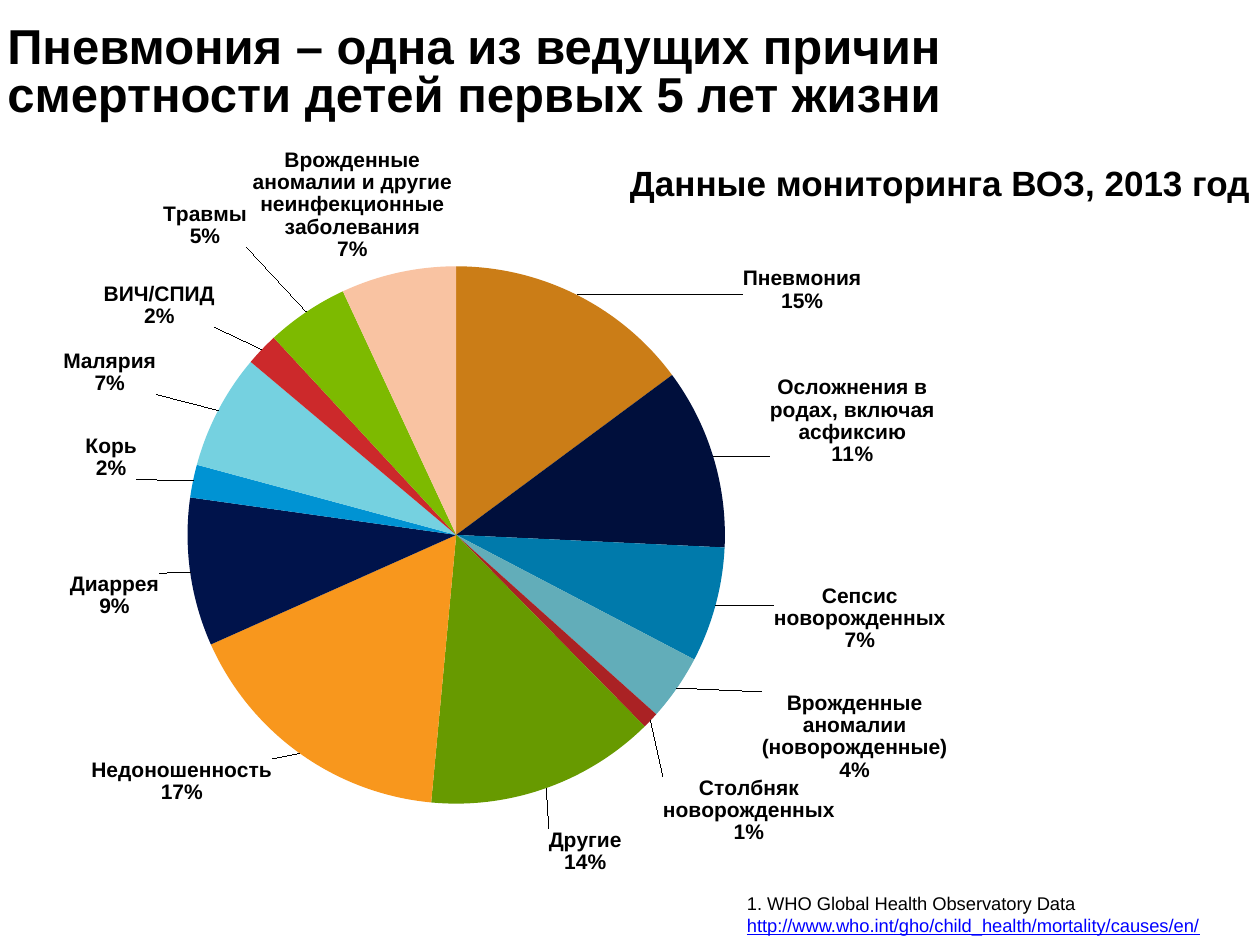
from dataclasses import dataclass
from math import cos, pi, sin

from pptx import Presentation
from pptx.chart.data import CategoryChartData
from pptx.dml.color import RGBColor
from pptx.enum.chart import XL_CHART_TYPE, XL_LABEL_POSITION
from pptx.enum.text import MSO_ANCHOR, PP_ALIGN
from pptx.oxml import parse_xml
from pptx.oxml.ns import nsdecls
from pptx.util import Pt

PIE = XL_CHART_TYPE.PIE
OUTSIDE_END = XL_LABEL_POSITION.OUTSIDE_END
TOP, MIDDLE = MSO_ANCHOR.TOP, MSO_ANCHOR.MIDDLE
LEFT, RIGHT = PP_ALIGN.LEFT, PP_ALIGN.RIGHT

FONT = "Arial"
BLACK = "000000"
LINK = "0000FF"

# Chart frame in points, plot area as fractions of it
CHART_X, CHART_Y, CHART_W, CHART_H = -48.24, 84.96, 629.28, 419.76
PLOT = {"x": 0.247, "y": 0.135, "w": 0.488, "h": 0.782}
LABEL_GAP = 4.25
LINE_H = 12.7


@dataclass
class Slice:
    """A pie slice and the place of its label on the slide, in points."""
    name: str
    value: float
    color: str
    left: float
    top: float
    width: float
    lines: int


SLICES = [
    Slice("Пневмония", 0.15, "CB7D17", 424.6, 153, 67.5, 2),
    Slice("Осложнения в родах, включая асфиксию", 0.11, "000F3C", 440, 215.4, 93.7, 4),
    Slice("Сепсис новорожденных", 0.07, "007AAB", 442.3, 334.3, 97.7, 3),
    Slice("Врожденные аномалии (новорожденные)", 0.04, "62ADB9", 435.4, 395.4, 105.7, 4),
    Slice("Столбняк новорожденных", 0.01, "AA2224", 378.9, 444, 97.7, 3),
    Slice("Другие", 0.14, "679A00", 313.7, 473.7, 41.1, 2),
    Slice("Недоношенность", 0.17, "F8971D", 52.6, 433.7, 102.9, 2),
    Slice("Диаррея", 0.09, "00134B", 40, 327.6, 50.9, 2),
    Slice("Корь", 0.02, "0093D3", 49.1, 248.6, 29.1, 2),
    Slice("Малярия", 0.07, "75D1E0", 36.6, 200, 52.6, 2),
    Slice("ВИЧ/СПИД", 0.02, "CC292B", 59.4, 161.7, 63.4, 2),
    Slice("Травмы", 0.05, "7DBA00", 93.7, 116, 47.4, 2),
    Slice("Врожденные аномалии и другие неинфекционные заболевания",
          0.07, "F9C3A2", 144, 85.1, 114.3, 5),
]


def rgb(color: str) -> RGBColor:
    return RGBColor.from_string(color)


def set_font(font, size: float, color: str = BLACK, bold: bool = False) -> None:
    font.name, font.size, font.bold = FONT, Pt(size), bold
    font.color.rgb = rgb(color)


def add_text(s, x: float, y: float, w: float, h: float, text: str, size: float,
             bold: bool = False, align=LEFT, anchor=TOP):
    tf = s.shapes.add_textbox(Pt(x), Pt(y), Pt(w), Pt(h)).text_frame
    tf.word_wrap = True
    tf.vertical_anchor = anchor
    p = tf.paragraphs[0]
    p.text = text
    p.alignment = align
    set_font(p.font, size, bold=bold)
    return p


def label_offset(sl: Slice, angle: float) -> tuple[float, float]:
    """Shift from the automatic outside position, as fractions of the chart."""
    radius = PLOT["w"] * CHART_W / 2 + LABEL_GAP
    x = CHART_X + (PLOT["x"] + PLOT["w"] / 2) * CHART_W + radius * sin(angle)
    y = CHART_Y + (PLOT["y"] + PLOT["h"] / 2) * CHART_H - radius * cos(angle)
    auto_left = x if sin(angle) > 0 else x - sl.width
    auto_top = y - sl.lines * LINE_H if cos(angle) > 0 else y
    return (sl.left - auto_left) / CHART_W, (sl.top - auto_top) / CHART_H


def label_xml(i: int, dx: float, dy: float):
    return parse_xml(f"""<c:dLbl {nsdecls("c", "a")}><c:idx val="{i}"/>
      <c:layout><c:manualLayout><c:x val="{dx:.4f}"/><c:y val="{dy:.4f}"/></c:manualLayout></c:layout>
      <c:numFmt formatCode="0%" sourceLinked="0"/><c:spPr><a:noFill/><a:ln><a:noFill/></a:ln></c:spPr>
      <c:txPr><a:bodyPr/><a:p><a:pPr><a:defRPr sz="1200" b="1">
        <a:solidFill><a:srgbClr val="{BLACK}"/></a:solidFill><a:latin typeface="{FONT}"/>
      </a:defRPr></a:pPr></a:p></c:txPr>
      <c:dLblPos val="outEnd"/><c:showLegendKey val="0"/><c:showVal val="1"/><c:showCatName val="1"/>
      <c:showSerName val="0"/><c:showPercent val="0"/><c:showBubbleSize val="0"/>
      <c:separator>\n</c:separator></c:dLbl>""")


def add_pie(s) -> None:
    data = CategoryChartData(number_format="0%")
    data.categories = [sl.name for sl in SLICES]
    data.add_series("Series 1", [sl.value for sl in SLICES])
    chart = s.shapes.add_chart(PIE, Pt(CHART_X), Pt(CHART_Y), Pt(CHART_W),
                               Pt(CHART_H), data).chart
    chart.has_legend = chart.has_title = False
    set_font(chart.font, 10)
    plot = chart.plots[0]
    plot.vary_by_categories = True

    # Fixed plot area
    area = chart._chartSpace.chart.plotArea
    for old in area.findall("{*}layout"):
        area.remove(old)
    sizes = "".join(f'<c:{k} val="{v}"/>' for k, v in PLOT.items())
    area.insert(0, parse_xml(
        f'<c:layout {nsdecls("c")}><c:manualLayout><c:layoutTarget val="inner"/>'
        f'<c:xMode val="edge"/><c:yMode val="edge"/>{sizes}</c:manualLayout></c:layout>'))

    # Slice colours and labels with leader lines
    series = plot.series[0]
    labels = series.data_labels
    labels.show_value = labels.show_category_name = True
    labels.number_format, labels.number_format_is_linked = "0%", False
    labels.position = OUTSIDE_END
    set_font(labels.font, 12, bold=True)
    total = sum(sl.value for sl in SLICES)
    start = 0.0
    for i, sl in enumerate(SLICES):
        fill = series.points[i].format.fill
        fill.solid()
        fill.fore_color.rgb = rgb(sl.color)
        angle = 2 * pi * (start + sl.value / 2) / total
        labels._element.insert(i, label_xml(i, *label_offset(sl, angle)))
        start += sl.value


def main() -> None:
    prs = Presentation()
    prs.slide_width, prs.slide_height = Pt(720), Pt(540)
    s = prs.slides.add_slide(prs.slide_layouts[6])

    # Title
    p = add_text(s, -2.88, 9.36, 680.4, 66.24,
                 "Пневмония – одна из ведущих причин \vсмертности детей первых 5 лет жизни",
                 28, bold=True, anchor=MIDDLE)
    p.line_spacing = 0.8

    # Source
    p = add_text(s, 419.76, 506.16, 300.24, 32.4,
                 "1. WHO Global Health Observatory Data ", 10.5)
    r = p.add_run()
    r.text = "http://www.who.int/gho/child_health/mortality/causes/en/"
    r.font.color.rgb = rgb(LINK)
    r.font.underline = True

    # Chart and its heading
    add_pie(s)
    add_text(s, 310.32, 88.56, 411.12, 38.88, "Данные мониторинга ВОЗ, 2013 год",
             20, bold=True, align=RIGHT)

    prs.save("out.pptx")


if __name__ == "__main__":
    main()
